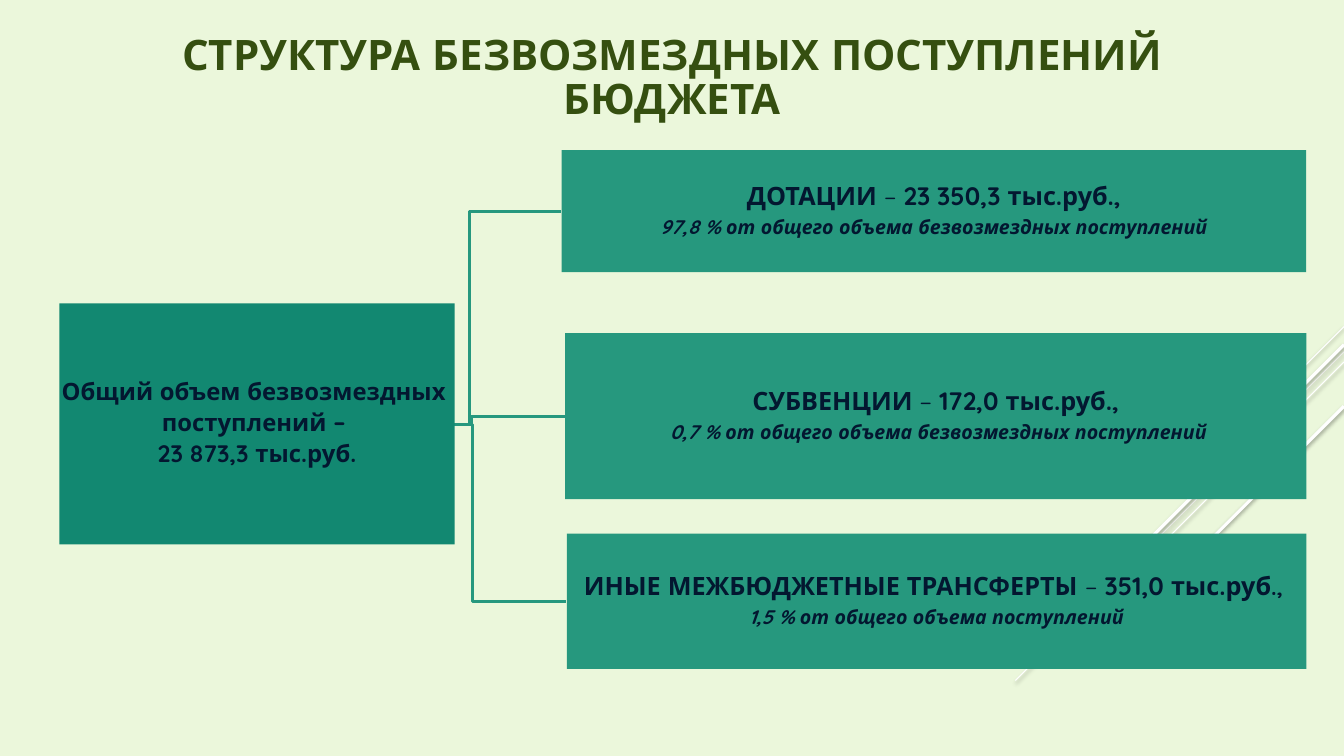
from lxml import etree
from pptx import Presentation
from pptx.dml.color import RGBColor
from pptx.enum import shapes as kinds, text as txt
from pptx.oxml import parse_xml
from pptx.oxml.ns import nsdecls
from pptx.util import Pt

FONT = "Quicksand"
INK = "031730"
TEAL = "26987E"
RIGHT_EDGE = 933.1


def color(hex_code):
    return RGBColor.from_string(hex_code)


def add_box(left, top, width, height, fill, space_after, paragraphs):
    """Draw a filled box; each paragraph is a list of (text, font format) runs."""
    box = slide.shapes.add_shape(kinds.MSO_SHAPE.RECTANGLE,
                                 Pt(left), Pt(top), Pt(width), Pt(height))
    box.shadow.inherit = False
    box.fill.solid()
    box.fill.fore_color.rgb = color(fill)
    box.line.fill.background()
    frame = box.text_frame
    frame.word_wrap = True
    frame.vertical_anchor = txt.MSO_ANCHOR.MIDDLE
    for side in ("left", "top", "right", "bottom"):
        setattr(frame, f"margin_{side}", Pt(0.7))
    for i, runs in enumerate(paragraphs):
        paragraph = frame.add_paragraph() if i else frame.paragraphs[0]
        spacing = {"alignment": txt.PP_ALIGN.CENTER, "line_spacing": 0.9,
                   "space_after": Pt(space_after)}
        for key, value in spacing.items():
            setattr(paragraph, key, value)
        for words, font_format in runs:
            run = paragraph.add_run()
            run.text = words
            run.font.color.rgb = color(INK)
            for key, value in ({"name": FONT} | font_format).items():
                setattr(run.font, key, value)


deck = Presentation()
deck.slide_width, deck.slide_height = Pt(960), Pt(540)
slide = deck.slides.add_slide(deck.slide_layouts[5])
slide.background.fill.solid()
slide.background.fill.fore_color.rgb = color("EBF7DB")

# Diagonal streaks: start height, horizontal and vertical run, line width
streaks = [(233.3, 72, 0.75), (251.3, 234.7, 0.75), (258.5, 149.4, 0.75),
           (246.2, 137.5, 2.25), (290.2, 100.1, 2.25)]
for start, reach, weight in streaks:
    streak = slide.shapes.add_connector(kinds.MSO_CONNECTOR.STRAIGHT, Pt(960), Pt(start),
                                        Pt(960 - reach), Pt(start + reach))
    streak.line.color.rgb = color("FFFFFF")
    streak.line.width = Pt(weight)
    streak._element.spPr.append(parse_xml(
        f'<a:effectLst {nsdecls("a")}><a:outerShdw blurRad="{Pt(3.1)}" dist="{Pt(1.6)}" '
        'dir="5400000" rotWithShape="0"><a:srgbClr val="000000"><a:alpha val="38000"/>'
        '</a:srgbClr></a:outerShdw></a:effectLst>'))

# Branches from the total to each kind of transfer
trunk_x, trunk_y = 270, 303.1
for end_x, end_y in [(404.6, 429.8), (403.9, 297.4), (401, 150.8)]:
    bend_x = (trunk_x + end_x) / 2
    outline = slide.shapes.build_freeform(Pt(trunk_x), Pt(trunk_y))
    corners = [(bend_x, trunk_y), (bend_x, end_y), (end_x, end_y)]
    outline.add_line_segments([(Pt(x), Pt(y)) for x, y in corners], close=False)
    branch = outline.convert_to_shape()
    branch.shadow.inherit = False
    branch.fill.background()
    branch.line.color.rgb = color(TEAL)
    branch.line.width = Pt(2)

total = {"size": Pt(17), "bold": True}
add_box(42.5, 216.7, 282.2, 172.1, "128871", 3.5, [
    [("Общий объем безвозмездных ", total)],
    [("поступлений – ", total)],
    [("23 873,3 тыс.руб.", total)],
])

amount = {"size": Pt(18), "bold": True}
dash = {"size": Pt(18), "bold": False}
ending = {"size": Pt(16), "bold": True}
gap = {"size": Pt(14), "bold": False}
share = {"size": Pt(14), "bold": True, "italic": True}
transfers = [
    (401.2, 107.2, 87.1,
     [("ДОТАЦИИ ", amount), ("– ", dash), ("23 350,3 тыс.руб.,", amount)],
     [("97,8 % от общего объема безвозмездных поступлений", share)]),
    (403.7, 237.9, 118.6,
     [("СУБВЕНЦИИ", amount), (" – ", dash), ("172,0 тыс.руб.,", amount)],
     [(" ", gap), ("0,7 % от общего объема безвозмездных поступлений", share)]),
    (404.9, 381.2, 96.6,
     [("ИНЫЕ МЕЖБЮДЖЕТНЫЕ ТРАНСФЕРТЫ ", amount), ("– ", dash),
      ("351,0 тыс.руб", amount), ("., ", ending)],
     [("1,5 % от общего объема поступлений", share)]),
]
for left, top, height, heading, detail in transfers:
    add_box(left, top, RIGHT_EDGE - left, height, TEAL, 5, [heading, detail])

title = slide.shapes.title
title_place = {"left": Pt(56.9), "top": Pt(21.5), "width": Pt(846.7), "height": Pt(76)}
for key, value in title_place.items():
    setattr(title, key, value)
title.text_frame.text = "СТРУКТУРА БЕЗВОЗМЕЗДНЫХ ПОСТУПЛЕНИЙ БЮДЖЕТА"
title.text_frame.word_wrap = True
title.text_frame.auto_size = txt.MSO_AUTO_SIZE.NONE
title.text_frame.vertical_anchor = txt.MSO_ANCHOR.TOP
heading_line = title.text_frame.paragraphs[0]
heading_line.alignment = txt.PP_ALIGN.CENTER
heading_line.line_spacing = 0.88
for key, value in {"name": FONT, "size": Pt(30), "bold": True}.items():
    setattr(heading_line.font, key, value)
heading_line.font.color.rgb = color("354F10")

deck.save("out.pptx")
